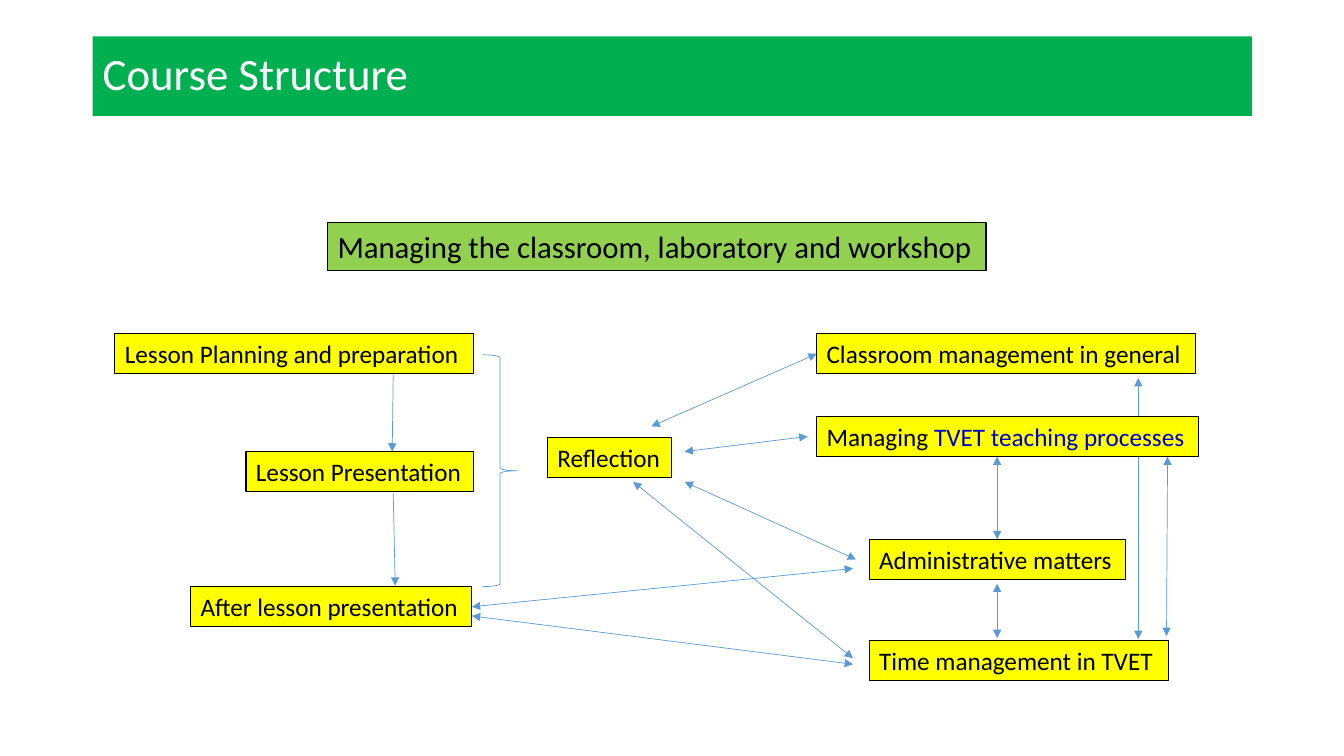
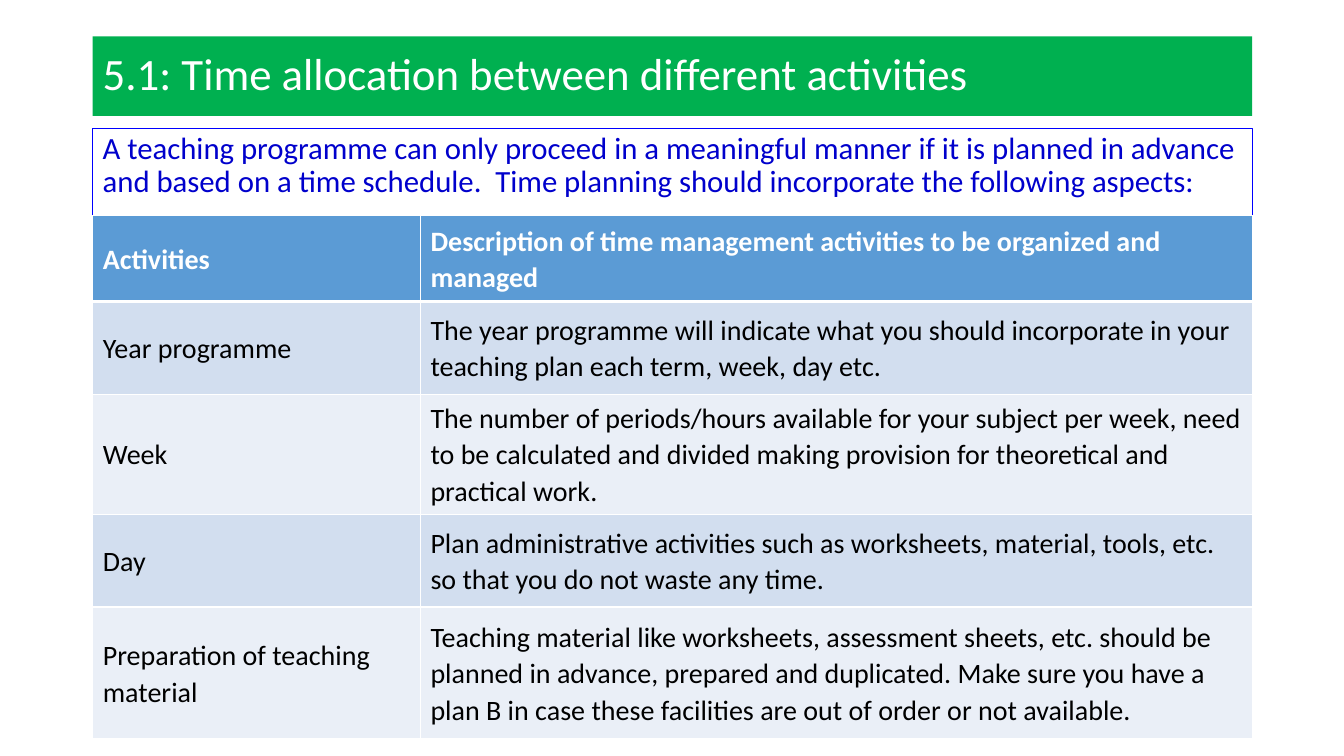
from lxml.etree import SubElement
from pptx import Presentation
from pptx.dml.color import RGBColor
from pptx.enum.shapes import MSO_CONNECTOR, MSO_SHAPE
from pptx.enum.text import MSO_ANCHOR, PP_ALIGN
from pptx.oxml.ns import qn
from pptx.util import Inches, Pt

WHITE = RGBColor(0xFF, 0xFF, 0xFF)
BLACK = RGBColor(0x00, 0x00, 0x00)
GREEN = RGBColor(0x00, 0xB0, 0x50)
LIGHT_GREEN = RGBColor(0x92, 0xD0, 0x50)
YELLOW = RGBColor(0xFF, 0xFF, 0x00)
BLUE = RGBColor(0x5B, 0x9B, 0xD5)
TEXT_BLUE = RGBColor(0x00, 0x00, 0xCC)
FRAME_BLUE = RGBColor(0x00, 0x00, 0xFF)
BAND_DARK = RGBColor(0xD2, 0xDE, 0xEF)
BAND_LIGHT = RGBColor(0xEA, 0xEF, 0xF7)

FONT = "Calibri"
LEFT, CONTENT_WIDTH = 0.92, 11.5
TOP_SIDE, LEFT_SIDE, RIGHT_SIDE = 0, 1, 3

TOPIC_HEIGHT = 0.4
TOPICS = {  # text: left, top, width
    "Lesson Planning and preparation": (1.14, 3.31, 3.56),
    "Lesson Presentation": (2.44, 4.48, 2.26),
    "After lesson presentation": (1.89, 5.82, 2.79),
    "Reflection": (5.43, 4.34, 1.23),
    "Classroom management in general": (8.1, 3.31, 3.76),
    "Administrative matters": (8.62, 5.35, 2.54),
    "Time management in TVET": (8.62, 6.35, 2.97),
}
LESSON_STEPS = [(3.9, 3.72, 3.89, 4.48), (3.9, 4.89, 3.92, 5.81)]
FREE_LINKS = [
    (6.79, 4.78, 8.49, 5.55),
    (6.28, 4.78, 8.46, 6.53),
    (4.68, 6.11, 8.46, 6.59),
    (9.89, 5.79, 9.89, 6.33),
    (11.58, 4.53, 11.57, 6.31),
    (6.79, 4.48, 8.01, 4.33),
    (11.29, 3.75, 11.29, 6.34),
]

COLUMN_WIDTHS = [3.25, 8.25]
ROW_HEIGHTS = [0.85, 0.92, 1.19, 0.92, 1.31]
ACTIVITIES = [
    ("Activities",
     "Description of time management activities to be organized and managed"),
    ("Year programme",
     "The year programme will indicate what you should incorporate in your "
     "teaching plan each term, week, day etc."),
    ("Week",
     "The number of periods/hours available for your subject per week, need "
     "to be calculated and divided making provision for theoretical and "
     "practical work."),
    ("Day",
     "Plan administrative activities such as worksheets, material, tools, "
     "etc. so that you do not waste any time."),
    ("Preparation of teaching material",
     "Teaching material like worksheets, assessment sheets, etc. should be "
     "planned in advance, prepared and duplicated. Make sure you have a plan "
     "B in case these facilities are out of order or not available."),
]


def write(frame, runs, size, bold=False, spacing=None):
    """Fill the first paragraph with (text, colour) runs."""
    para = frame.paragraphs[0]
    para.alignment = PP_ALIGN.LEFT
    if spacing:
        para.line_spacing = spacing
    for text, color in runs:
        span = para.add_run()
        span.text = text
        span.font.name = FONT
        span.font.size = Pt(size)
        span.font.bold = bold
        span.font.color.rgb = color


def add_box(page, left, top, width, height, runs, size, fill=None, line=None,
            anchor=MSO_ANCHOR.TOP, spacing=None):
    box = page.shapes.add_shape(MSO_SHAPE.RECTANGLE, Inches(left), Inches(top),
                                Inches(width), Inches(height))
    box.shadow.inherit = False
    if fill is None:
        box.fill.background()
    else:
        box.fill.solid()
        box.fill.fore_color.rgb = fill
    if line is None:
        box.line.fill.background()
    else:
        box.line.color.rgb = line
        box.line.width = Pt(0.75)
    box.text_frame.word_wrap = True
    box.text_frame.vertical_anchor = anchor
    write(box.text_frame, runs, size, spacing=spacing)
    return box


def add_title(page, text):
    add_box(page, LEFT, 0.36, CONTENT_WIDTH, 0.79, [(text, WHITE)], 32,
            fill=GREEN, anchor=MSO_ANCHOR.MIDDLE, spacing=0.9)


def add_topic(page, left, top, width, runs):
    return add_box(page, left, top, width, TOPIC_HEIGHT, runs, 18,
                   fill=YELLOW, line=BLACK)


def add_arrow(page, points, both_ends=True):
    arrow = page.shapes.add_connector(MSO_CONNECTOR.STRAIGHT,
                                      *[Inches(value) for value in points])
    arrow.line.color.rgb = BLUE
    arrow.line.width = Pt(0.5)
    outline = arrow.line._get_or_add_ln()
    for end in ("a:headEnd", "a:tailEnd") if both_ends else ("a:tailEnd",):
        SubElement(outline, qn(end), type="triangle")
    SubElement(arrow._element.spPr, qn("a:effectLst"))
    return arrow


def add_brace(page, left, top, width, height):
    brace = page.shapes.add_shape(MSO_SHAPE.RIGHT_BRACE, Inches(left),
                                  Inches(top), Inches(width), Inches(height))
    brace.shadow.inherit = False
    brace.fill.background()
    brace.line.color.rgb = BLUE
    brace.line.width = Pt(0.5)


def set_borders(cell, top, bottom):
    """Draw white borders; top and bottom widths are in points."""
    properties = cell._tc.get_or_add_tcPr()
    for side, width in (("L", 1), ("R", 1), ("T", top), ("B", bottom)):
        border = SubElement(properties, qn("a:ln" + side), w=str(Pt(width)))
        solid = SubElement(border, qn("a:solidFill"))
        SubElement(solid, qn("a:srgbClr"), val=str(WHITE))


def add_activity_table(page, top):
    table = page.shapes.add_table(
        len(ACTIVITIES), len(COLUMN_WIDTHS), Inches(LEFT), Inches(top),
        Inches(CONTENT_WIDTH), Inches(sum(ROW_HEIGHTS))).table
    for column, width in zip(table.columns, COLUMN_WIDTHS):
        column.width = Inches(width)
    for index, (height, texts) in enumerate(zip(ROW_HEIGHTS, ACTIVITIES)):
        table.rows[index].height = Inches(height)
        header = index == 0
        band = BAND_DARK if index % 2 else BAND_LIGHT
        for cell, text in zip(table.rows[index].cells, texts):
            set_borders(cell, top=3 if index == 1 else 1,
                        bottom=3 if header else 1)
            cell.fill.solid()
            cell.fill.fore_color.rgb = BLUE if header else band
            cell.vertical_anchor = MSO_ANCHOR.MIDDLE
            write(cell.text_frame, [(text, WHITE if header else BLACK)], 20,
                  bold=header, spacing=1.07)


def build_structure(page):
    add_title(page, "Course Structure")
    add_box(page, 3.25, 2.21, 6.53, 0.47,
            [("Managing the classroom, laboratory and workshop", BLACK)], 22,
            fill=LIGHT_GREEN, line=BLACK)
    topics = {text: add_topic(page, *place, [(text, BLACK)])
              for text, place in TOPICS.items()}
    add_brace(page, 4.79, 3.52, 0.34, 2.3)

    for points in LESSON_STEPS:
        add_arrow(page, points, both_ends=False)
    for points in FREE_LINKS:
        add_arrow(page, points)
    after_to_admin = add_arrow(page, (4.68, 6.02, 8.46, 5.64))
    after_to_admin.begin_connect(topics["After lesson presentation"], RIGHT_SIDE)
    teaching_to_admin = add_arrow(page, (9.89, 4.53, 9.89, 5.35))
    teaching_to_admin.end_connect(topics["Administrative matters"], TOP_SIDE)
    reflection_to_classroom = add_arrow(page, (6.46, 4.23, 8.1, 3.51))
    reflection_to_classroom.end_connect(
        topics["Classroom management in general"], LEFT_SIDE)

    # Added last so that it covers the long vertical arrow.
    add_topic(page, 8.1, 4.13, 3.79,
              [("Managing ", BLACK), ("TVET teaching processes", TEXT_BLUE)])


def build_time_allocation(page):
    add_title(page, "5.1: Time allocation between different activities")
    add_box(page, LEFT, 1.27, CONTENT_WIDTH, 6.05,
            [("A teaching programme can only proceed in a meaningful manner if "
              "it is planned in advance and based on a time schedule.  Time "
              "planning should incorporate the following aspects:", TEXT_BLUE)],
            22, line=FRAME_BLUE, spacing=0.9)
    add_activity_table(page, 2.14)


def main():
    deck = Presentation()
    deck.slide_width, deck.slide_height = Inches(13.33), Inches(7.5)
    blank = deck.slide_layouts[6]
    for build in (build_structure, build_time_allocation):
        build(deck.slides.add_slide(blank))
    deck.save("out.pptx")


if __name__ == "__main__":
    main()
